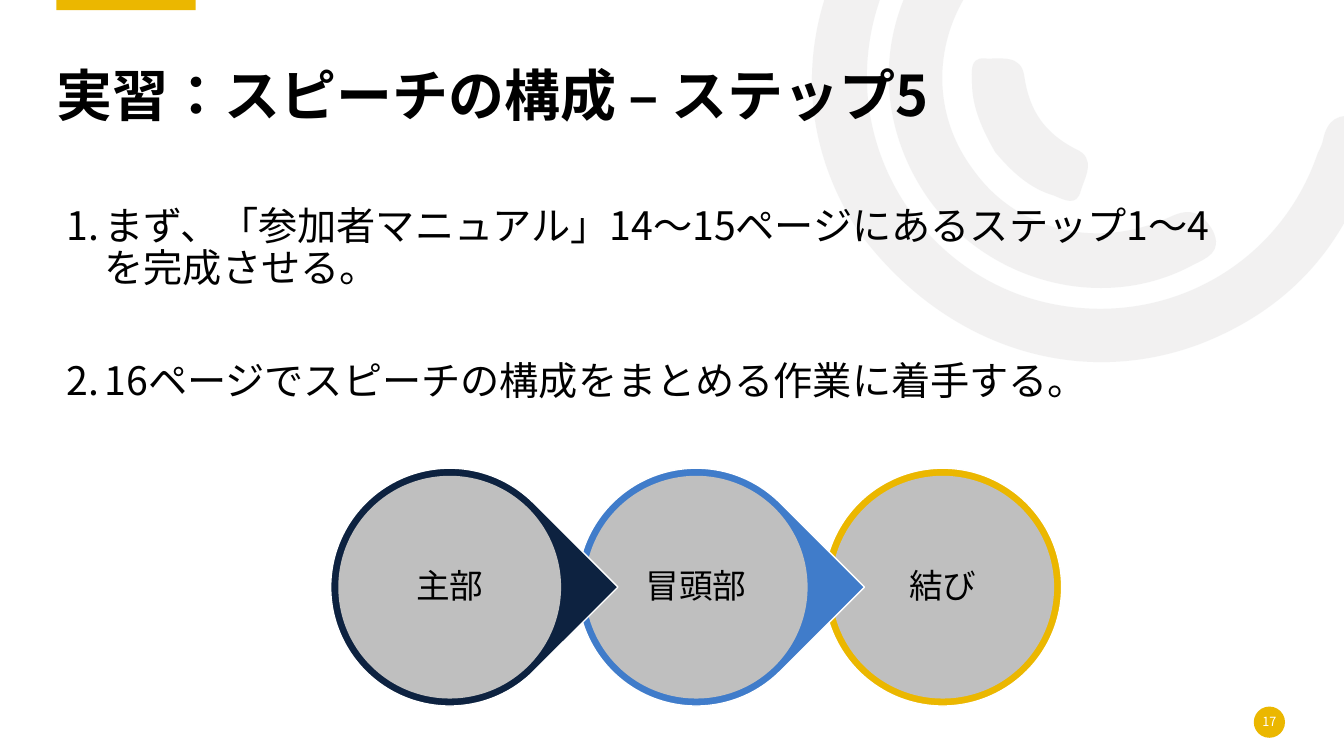
import pptx
import pptx.util
import pptx.dml.color
import pptx.enum.lang
import pptx.enum.shapes
import pptx.enum.text
import pptx.oxml.ns
from lxml import etree

Inches = pptx.util.Inches
Pt = pptx.util.Pt
SHAPES = pptx.enum.shapes.MSO_SHAPE
ANCHOR = pptx.enum.text.MSO_ANCHOR
ALIGN = pptx.enum.text.PP_ALIGN
JAPANESE = pptx.enum.lang.MSO_LANGUAGE_ID.JAPANESE
qn = pptx.oxml.ns.qn

TITLE = "実習：スピーチの構成 – ステップ5"
STEPS = [
    "まず、「参加者マニュアル」14～15ページにあるステップ1～4を完成させる。",
    "16ページでスピーチの構成をまとめる作業に着手する。",
]
PAGE_NUMBER = "17"
COLORS = {"gold": "EBB700", "blue": "407CCA", "navy": "0D2240", "disc": "BFBFBF",
          "ornament": "E7E6E6", "white": "FFFFFF", "black": "000000"}
STAGES = [("主部", "navy"), ("冒頭部", "blue"), ("結び", "gold")]
FONT = "Noto Sans CJK JP"

# Each ornament: start point, then cubic curves (two controls and an end point)
OUTER_ARC = ((8.51, 2.29), [
    (7.99, 1.49, 7.87, 0.5, 8.38, -0.5), (8.9, -1.52, 9.76, -2.03, 10.9, -2.07),
    (11.05, -2.07, 11.21, -2.1, 11.31, -1.95), (11.44, -1.75, 11.27, -1.54, 10.98, -1.54),
    (9.67, -1.54, 8.65, -0.59, 8.6, 0.68), (8.56, 1.81, 9.36, 2.81, 10.46, 3.02),
    (11.6, 3.24, 12.7, 2.61, 13.07, 1.52), (13.09, 1.48, 13.11, 1.44, 13.12, 1.4),
    (13.16, 1.19, 13.27, 1.11, 13.49, 1.17), (13.73, 1.24, 13.67, 1.41, 13.61, 1.56),
    (13.34, 2.45, 12.78, 3.07, 11.91, 3.41), (10.7, 3.87, 9.36, 3.45, 8.51, 2.29)])
MIDDLE_ARC = ((9.22, 1.99), [
    (8.62, 1.15, 8.69, 0.07, 9.4, -0.68), (9.51, -0.79, 9.62, -0.95, 9.8, -0.78),
    (9.95, -0.64, 9.97, -0.5, 9.79, -0.32), (9.25, 0.26, 9.2, 1.08, 9.65, 1.68),
    (10.08, 2.29, 10.88, 2.49, 11.61, 2.15), (11.82, 2.05, 11.93, 2.12, 12.03, 2.29),
    (12.13, 2.5, 11.97, 2.56, 11.83, 2.63), (10.96, 3.1, 9.83, 2.82, 9.22, 1.99)])
INNER_ARC = ((9.87, 1.51), [
    (9.75, 1.3, 9.64, 1.07, 9.64, 0.82), (9.64, 0.73, 9.61, 0.57, 9.76, 0.58),
    (9.92, 0.59, 10.13, 0.53, 10.16, 0.76), (10.21, 1.1, 10.36, 1.32, 10.67, 1.48),
    (10.88, 1.57, 10.76, 1.76, 10.72, 1.89), (10.68, 2.06, 10.55, 1.98, 10.45, 1.94),
    (10.21, 1.87, 10.03, 1.7, 9.87, 1.51)])

STAGE_LEFT, STAGE_PITCH, STAGE_CENTER_Y = 3.28, 2.445, 5.825
RING_SIZE, DISC_SIZE = 2.36, 2.21


def color(name):
    return pptx.dml.color.RGBColor.from_string(COLORS[name])


def paint(shape, fill, line=None):
    shape.shadow.inherit = False
    shape.fill.solid()
    shape.fill.fore_color.rgb = color(fill)
    if line:
        shape.line.color.rgb = color(line)
        shape.line.width = Pt(1)
    else:
        shape.line.fill.background()


def add_preset(slide, preset, left, top, width, height, fill, line=None):
    shape = slide.shapes.add_shape(preset, Inches(left), Inches(top),
                                   Inches(width), Inches(height))
    paint(shape, fill, line)
    return shape


def add_ornament(slide, start, curves):
    """Build the outline from its end points, then bend each side into its curve."""
    builder = slide.shapes.build_freeform(Inches(start[0]), Inches(start[1]))
    builder.add_line_segments([(Inches(curve[4]), Inches(curve[5])) for curve in curves])
    shape = builder.convert_to_shape()
    paint(shape, "ornament")
    fill_color = shape.fill._xPr.find(qn("a:solidFill"))[0]
    etree.SubElement(fill_color, qn("a:alpha"), val="53000")
    sides = list(shape._element.iter(qn("a:lnTo")))
    for side, curve in zip(sides, curves):
        bend = etree.Element(qn("a:cubicBezTo"))
        for x, y in zip(curve[::2], curve[1::2]):
            etree.SubElement(bend, qn("a:pt"), x=str(Inches(x) - shape.left),
                             y=str(Inches(y) - shape.top))
        side.getparent().replace(side, bend)
    etree.SubElement(bend.getparent(), qn("a:close"))


def set_margins(frame, margin):
    frame.margin_left = frame.margin_right = Inches(margin)
    frame.margin_top = frame.margin_bottom = Inches(margin)


def style_runs(paragraph, size, color_name, bold=False):
    for run in paragraph.runs:
        run.font.size = Pt(size)
        run.font.bold = bold
        run.font.name = FONT
        run.font.language_id = JAPANESE
        run.font.color.rgb = color(color_name)
        etree.SubElement(run.font._element, qn("a:ea"), typeface=FONT)


def add_label(shape, text, size, color_name, margin):
    frame = shape.text_frame
    set_margins(frame, margin)
    frame.vertical_anchor = ANCHOR.MIDDLE
    frame.text = text
    paragraph = frame.paragraphs[0]
    paragraph.alignment = ALIGN.CENTER
    paragraph.line_spacing = 0.9
    style_runs(paragraph, size, color_name)


def add_text_box(slide, left, top, width, height):
    box = slide.shapes.add_textbox(Inches(left), Inches(top), Inches(width), Inches(height))
    box.text_frame.word_wrap = True
    return box.text_frame


def add_title(slide):
    frame = add_text_box(slide, 0.56, 0.27, 12.19, 1.01)
    set_margins(frame, 0)
    frame.vertical_anchor = ANCHOR.BOTTOM
    frame.text = TITLE
    frame.paragraphs[0].line_spacing = 0.9
    style_runs(frame.paragraphs[0], 40, "black", bold=True)


def add_steps(slide):
    frame = add_text_box(slide, 0.56, 2, 11.85, 2.46)
    for index, step in enumerate(STEPS):
        paragraph = frame.add_paragraph() if index else frame.paragraphs[0]
        paragraph.text = step
        paragraph.line_spacing = 0.9
        if index:
            paragraph.space_before = Pt(50)
        properties = paragraph._p.get_or_add_pPr()
        properties.set("marL", str(Inches(0.38)))
        properties.set("indent", str(-Inches(0.38)))
        etree.SubElement(properties, qn("a:buFont"), typeface=FONT)
        etree.SubElement(properties, qn("a:buAutoNum"), type="arabicPeriod")
        style_runs(paragraph, 28, "black")


def add_stages(slide):
    """Draw from right to left so that each pointer overlaps the next stage."""
    last = len(STAGES) - 1
    for index in range(last, -1, -1):
        name, ring_color = STAGES[index]
        left = STAGE_LEFT + index * STAGE_PITCH
        preset = SHAPES.OVAL if index == last else SHAPES.TEAR
        ring = add_preset(slide, preset, left, STAGE_CENTER_Y - RING_SIZE / 2,
                          RING_SIZE, RING_SIZE, ring_color, "white")
        if index != last:
            ring.rotation = 45
        disc = add_preset(slide, SHAPES.OVAL, left + (RING_SIZE - DISC_SIZE) / 2,
                          STAGE_CENTER_Y - DISC_SIZE / 2, DISC_SIZE, DISC_SIZE, "disc")
        add_label(disc, name, 24, "black", 0.03)


def main():
    presentation = pptx.Presentation()
    presentation.slide_width = Inches(13.33)
    presentation.slide_height = Inches(7.5)
    slide = presentation.slides.add_slide(presentation.slide_layouts[6])
    for start, curves in (OUTER_ARC, MIDDLE_ARC, INNER_ARC):
        add_ornament(slide, start, curves)
    add_preset(slide, SHAPES.RECTANGLE, 0.56, -0.02, 1.38, 0.12, "gold")
    badge = add_preset(slide, SHAPES.OVAL, 12.435, 7.01, 0.31, 0.31, "gold")
    badge.text_frame.word_wrap = False
    add_label(badge, PAGE_NUMBER, 9, "white", 0)
    add_steps(slide)
    add_title(slide)
    add_stages(slide)
    presentation.save("out.pptx")


if __name__ == "__main__":
    main()
